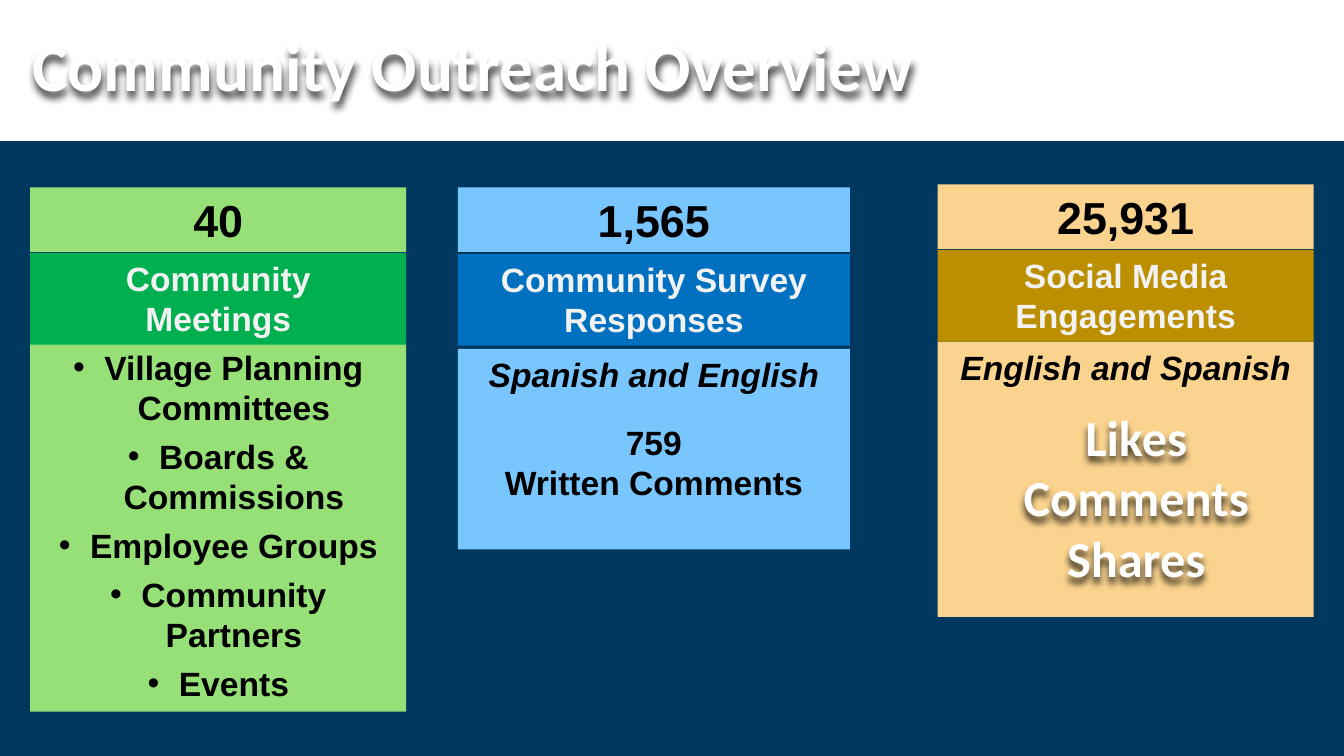
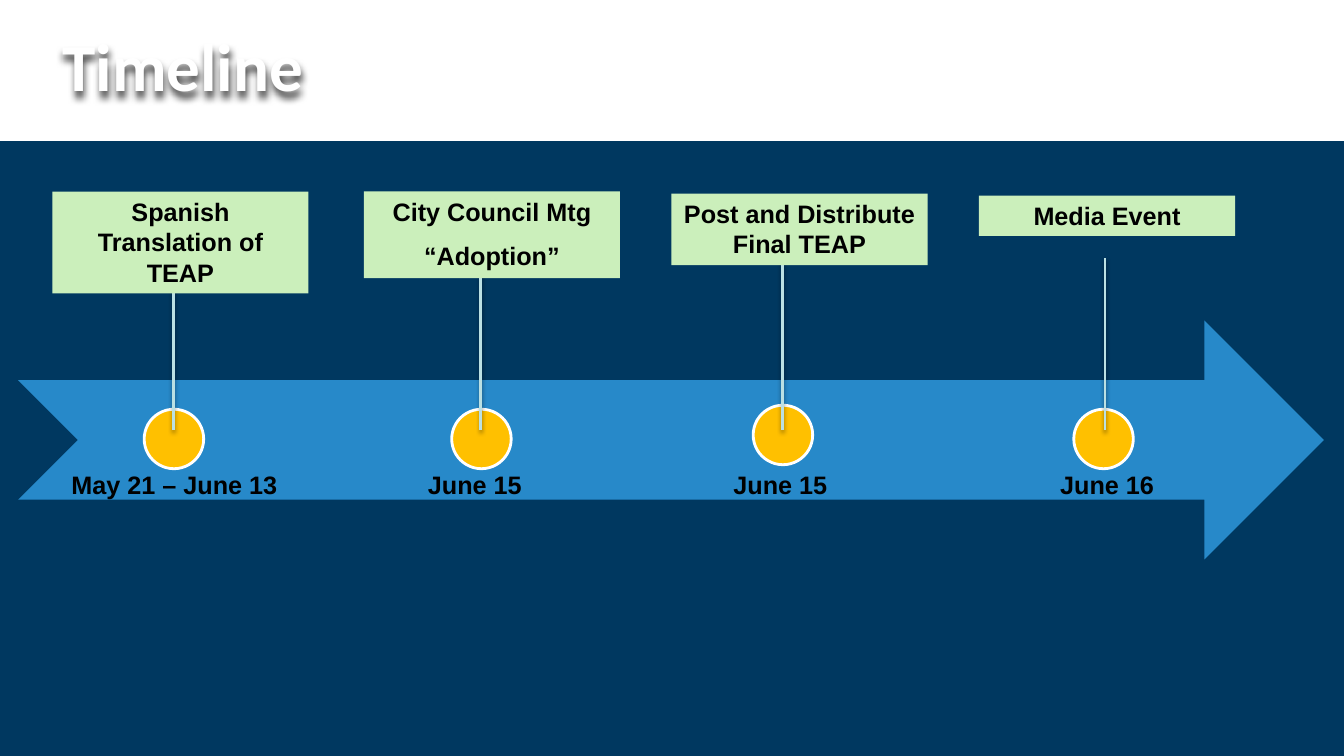
from lxml import etree
from pptx import Presentation
from pptx.dml.color import RGBColor
from pptx.enum.shapes import MSO_CONNECTOR, MSO_SHAPE
from pptx.enum.text import MSO_ANCHOR, PP_ALIGN
from pptx.oxml.ns import qn
from pptx.util import Pt

PX = 9144  # EMU per px, 100 px to the inch
SLIDE_W, SLIDE_H = 1333, 750
BAND_TOP = 140
RECT, OVAL = MSO_SHAPE.RECTANGLE, MSO_SHAPE.OVAL
ARROW = MSO_SHAPE.NOTCHED_RIGHT_ARROW
STRAIGHT = MSO_CONNECTOR.STRAIGHT
TOP = MSO_ANCHOR.TOP
LEFT, CENTER = PP_ALIGN.LEFT, PP_ALIGN.CENTER

WHITE = RGBColor(0xFF, 0xFF, 0xFF)
BLACK = RGBColor(0x00, 0x00, 0x00)
PALE = RGBColor(0xF2, 0xF2, 0xF2)
NAVY = RGBColor(0x00, 0x38, 0x60)
LIGHT_GREEN = RGBColor(0x96, 0xE0, 0x77)
GREEN = RGBColor(0x00, 0xB0, 0x50)
LIGHT_BLUE = RGBColor(0x79, 0xC6, 0xFF)
BLUE = RGBColor(0x00, 0x70, 0xC0)
LIGHT_GOLD = RGBColor(0xFA, 0xD3, 0x8E)
GOLD = RGBColor(0xBC, 0x8F, 0x00)
ARROW_BLUE = RGBColor(0x27, 0x89, 0xC9)
AMBER = RGBColor(0xFF, 0xC0, 0x00)
STEM = RGBColor(0xBB, 0xE0, 0xE3)
MINT = RGBColor(0xCB, 0xEF, 0xBB)

TITLE = {"name": "Calibri", "size": Pt(48), "bold": True, "color": WHITE}
REACTION = {**TITLE, "size": Pt(36)}
BODY = {"name": "Arial", "size": Pt(24), "bold": True, "color": BLACK}
LANGUAGES = {**BODY, "italic": True}
COUNT = {**BODY, "size": Pt(32)}
HEADING = {**BODY, "color": PALE}
EVENT = {**BODY, "size": Pt(18)}

TEXT_SHADOW = {"blur": 5, "distance": 4, "alpha": 75}
STEM_SHADOW = {"blur": 3.1, "distance": 1.6, "alpha": 38}

# A paragraph is (text, format, points of space before)
COUNT_H, HEADING_H = 64, 91
COLUMNS = [
    {"left": 30, "width": 373, "count_top": 186, "heading_top": 251,
     "body_top": 339, "body_height": 367, "light": LIGHT_GREEN, "dark": GREEN,
     "count": "40", "heading": ["Community", "Meetings"], "bullets": True,
     "body": [("Village Planning Committees", BODY, 0),
              ("Boards & Commissions", BODY, 6),
              ("Employee Groups", BODY, 6),
              ("Community Partners", BODY, 6),
              ("Events", BODY, 6)]},
    {"left": 454, "width": 389, "count_top": 186, "heading_top": 252,
     "body_top": 346, "body_height": 199, "light": LIGHT_BLUE, "dark": BLUE,
     "count": "1,565", "heading": ["Community Survey Responses"], "bullets": False,
     "body": [("Spanish and English", LANGUAGES, 0),
              ("759", BODY, 20),
              ("Written Comments", BODY, 0)]},
    {"left": 930, "width": 373, "count_top": 183, "heading_top": 248,
     "body_top": 339, "body_height": 273, "light": LIGHT_GOLD, "dark": GOLD,
     "count": "25,931", "heading": ["Social Media Engagements"], "bullets": False,
     "body": [("English and Spanish", LANGUAGES, 0)]},
]
REACTIONS = ["Likes", "Comments", "Shares"]

CARD_W, DOT, DATE_W, DATE_TOP, STEM_END = 254, 59, 242, 461, 427
# card: left, top, height; dot: left, top; stem: x, top; date: centre
EVENTS = [
    {"text": ["Spanish Translation of TEAP"], "date": "May 21 – June 13",
     "card": (52, 190, 101), "dot": (143, 406), "stem": (172, 256), "centre": 173},
    {"text": ["City Council Mtg", "“Adoption”"], "date": "June 15",
     "card": (361, 190, 86), "dot": (448, 406), "stem": (477, 256), "centre": 471},
    {"text": ["Post and Distribute Final TEAP"], "date": "June 15",
     "card": (666, 192, 71), "dot": (747, 402), "stem": (776, 233), "centre": 774},
    {"text": ["Media Event"], "date": "June 16",
     "card": (971, 194, 40), "dot": (1065, 406), "stem": (1096, 256), "centre": 1098},
]


def emu(*lengths):
    return [length * PX for length in lengths]


def plain(texts, style, gap=0):
    """Paragraphs of one style, with a gap before all but the first."""
    return [(text, style, gap if i else 0) for i, text in enumerate(texts)]


def add_shadow(shape, blur, distance, alpha):
    effects = etree.SubElement(shape._element.spPr, qn("a:effectLst"))
    outer = etree.SubElement(effects, qn("a:outerShdw"), blurRad=str(Pt(blur)),
                             dist=str(Pt(distance)), dir="5400000",
                             algn="ctr", rotWithShape="0")
    color = etree.SubElement(outer, qn("a:srgbClr"), val="000000")
    etree.SubElement(color, qn("a:alpha"), val=str(alpha * 1000))


def add_bullet(paragraph):
    properties = paragraph._p.get_or_add_pPr()
    indent = 31 * PX
    properties.set("marL", str(indent))
    properties.set("indent", str(-indent))
    etree.SubElement(properties, qn("a:buFont"), typeface="Arial")
    etree.SubElement(properties, qn("a:buChar"), char="•")


def write(shape, paragraphs, align=CENTER, bullets=False):
    frame = shape.text_frame
    frame.word_wrap = True
    frame.vertical_anchor = TOP
    for i, (text, style, gap) in enumerate(paragraphs):
        paragraph = frame.add_paragraph() if i else frame.paragraphs[0]
        paragraph.alignment = align
        paragraph.space_before = Pt(gap)
        if bullets:
            add_bullet(paragraph)
        run = paragraph.add_run()
        run.text = text
        for key, value in style.items():
            if key == "color":
                run.font.color.rgb = value
            else:
                setattr(run.font, key, value)


def add_block(slide, kind, box, fill, line=None):
    shape = slide.shapes.add_shape(kind, *emu(*box))
    shape.shadow.inherit = False
    shape.fill.solid()
    shape.fill.fore_color.rgb = fill
    if line:
        shape.line.color.rgb = line
        shape.line.width = Pt(2)
    else:
        shape.line.fill.background()
    return shape


def add_label(slide, box, paragraphs, align=CENTER, shadow=None):
    label = slide.shapes.add_textbox(*emu(*box))
    write(label, paragraphs, align)
    if shadow:
        add_shadow(label, **shadow)


def add_base(deck, title, left):
    """Blank slide with the shared title and navy band."""
    slide = deck.slides.add_slide(deck.slide_layouts[6])
    add_label(slide, (left, 19, 1175, 86), plain([title], TITLE), LEFT, TEXT_SHADOW)
    add_block(slide, RECT, (0, BAND_TOP, SLIDE_W, SLIDE_H - BAND_TOP), NAVY)
    return slide


def build_outreach(deck):
    slide = add_base(deck, "Community Outreach Overview", 22)
    for column in COLUMNS:
        left, width = column["left"], column["width"]
        body = add_block(slide, RECT, (left, column["body_top"], width,
                                       column["body_height"]), column["light"])
        write(body, column["body"], bullets=column["bullets"])
        heading = add_block(slide, RECT, (left, column["heading_top"], width, HEADING_H),
                            column["dark"])
        write(heading, plain(column["heading"], HEADING))
        count = add_block(slide, RECT, (left, column["count_top"], width, COUNT_H),
                          column["light"])
        write(count, plain([column["count"]], COUNT))
    add_label(slide, (936, 398, 382, 193), plain(REACTIONS, REACTION), shadow=TEXT_SHADOW)


def build_timeline(deck):
    slide = add_base(deck, "Timeline", 52)
    add_block(slide, ARROW, (18, 318, 1295, 237), ARROW_BLUE)
    for event in EVENTS:
        add_block(slide, OVAL, (*event["dot"], DOT, DOT), AMBER, WHITE)
        add_label(slide, (event["centre"] - DATE_W // 2, DATE_TOP, DATE_W, 40),
                  plain([event["date"]], EVENT))
        x, top = event["stem"]
        stem = slide.shapes.add_connector(STRAIGHT, *emu(x, top, x, STEM_END))
        stem.line.color.rgb = STEM
        stem.line.width = Pt(2)
        add_shadow(stem, **STEM_SHADOW)
        left, top, height = event["card"]
        card = add_block(slide, RECT, (left, top, CARD_W, height), MINT)
        write(card, plain(event["text"], EVENT, 10))


def main():
    deck = Presentation()
    deck.slide_width, deck.slide_height = emu(SLIDE_W, SLIDE_H)
    build_outreach(deck)
    build_timeline(deck)
    deck.save("out.pptx")


if __name__ == "__main__":
    main()
